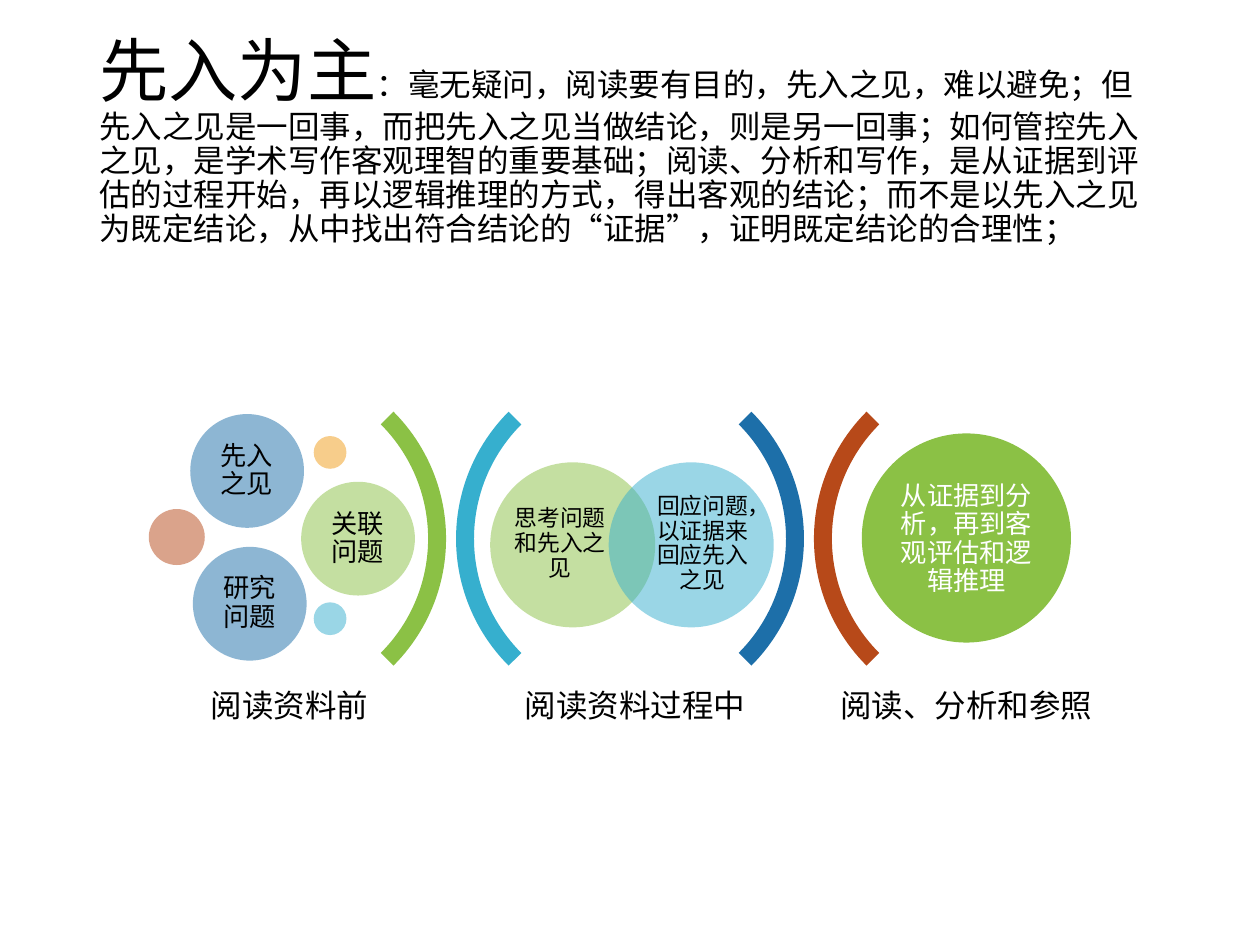
"""Build the slide on preconceptions before, during and after reading."""
from lxml import etree
from pptx import Presentation
from pptx.dml.color import RGBColor
from pptx.enum.shapes import MSO_SHAPE
from pptx.enum.text import MSO_ANCHOR, PP_ALIGN
from pptx.oxml.ns import qn
from pptx.util import Pt

ARC, CIRCLE = MSO_SHAPE.BLOCK_ARC, MSO_SHAPE.OVAL
MIDDLE, CENTER, LEFT = MSO_ANCHOR.MIDDLE, PP_ALIGN.CENTER, PP_ALIGN.LEFT

THEME = {
    "font": "Times New Roman",
    "black": "000000", "white": "FFFFFF",
    "green": "8BC145", "cyan": "36AFCE", "blue": "1D6FA9",
    "rust": "B74919", "orange": "F19D19",
    "heading": 39.6, "body": 18, "label": 18, "circle": 15, "overlap": 13,
}

HEADING = "先入为主"
BODY = (
    "：毫无疑问，阅读要有目的，先入之见，难以避免；但先入之见是一回事，"
    "而把先入之见当做结论，则是另一回事；如何管控先入之见，是学术写作客观理智的重要基础；"
    "阅读、分析和写作，是从证据到评估的过程开始，再以逻辑推理的方式，得出客观的结论；"
    "而不是以先入之见为既定结论，从中找出符合结论的“证据”，证明既定结论的合理性；"
)
TITLE_AREA = (49.7, 28.8, 620.6, 104.4)

# left, rotation, colour
ARCS = [
    (49.7, 90, "green"), (260.6, 270, "cyan"),
    (254.2, 90, "blue"), (465.1, 270, "rust"),
]
ARC_TOP, ARC_SIZE = 205.2, 205.2
ARC_SHAPE = (135, 189, 0.05)

# left, top, diameter, colour, opacity in percent
CIRCLES = [
    (280.1, 264.2, 94.3, "green", 50), (347.8, 264.2, 94.3, "cyan", 50),
    (108.7, 236.6, 65, "blue", 50), (85, 290.9, 32, "rust", 50),
    (179.3, 249.2, 18.7, "orange", 50), (172.1, 275.3, 65, "green", 50),
    (179.3, 344.2, 18.7, "cyan", 50), (110.2, 312.5, 65, "blue", 50),
    (492.5, 247.7, 119.5, "green", 100),
]

# text, left, top, width, height, inset, size, colour
CAPTIONS = [
    ("思考问题和先入之见", 293, 275, 54, 72, 0, "overlap", "black"),
    ("回应问题，以证据来回应先入之见", 374.4, 275, 54, 72, 0, "overlap", "black"),
    ("先入之见", 118.1, 246.2, 46.1, 46.1, 4.3, "circle", "black"),
    ("关联问题", 181.4, 285.1, 46.1, 46.1, 4.3, "circle", "black"),
    ("研究问题", 119.5, 321.8, 46.1, 46.1, 4.3, "circle", "black"),
    ("从证据到分析，再到客观评估和逻辑推理", 509.8, 265.7, 85, 85, 4.3, "circle", "white"),
]
LABELS = [("阅读资料前", 87.8), ("阅读资料过程中", 285.1), ("阅读、分析和参照", 474.5)]
LABEL_TOP, LABEL_WIDTH, LABEL_HEIGHT, LABEL_INSET = 383.8, 155.5, 41, 5


def add_solid(slide, kind, area, colour, opacity=100):
    shape = slide.shapes.add_shape(kind, *map(Pt, area))
    shape.shadow.inherit = False
    shape.line.fill.background()
    shape.fill.solid()
    shape.fill.fore_color.rgb = RGBColor.from_string(THEME[colour])
    if opacity < 100:
        tint = next(shape._element.spPr.iter(qn("a:srgbClr")))
        etree.SubElement(tint, qn("a:alpha"), val=str(opacity * 1000))
    return shape


def add_text(slide, area, spans, colour, align, insets):
    box = slide.shapes.add_textbox(*map(Pt, area))
    frame = box.text_frame
    frame.word_wrap = True
    frame.vertical_anchor = MIDDLE
    frame.margin_left = frame.margin_right = Pt(insets[0])
    frame.margin_top = frame.margin_bottom = Pt(insets[1])
    para = frame.paragraphs[0]
    para.alignment = align
    para.line_spacing = 0.9
    for text, size in spans:
        span = para.add_run()
        span.text = text
        span.font.name = THEME["font"]
        span.font.size = Pt(THEME[size])
        span.font.color.rgb = RGBColor.from_string(THEME[colour])


def main():
    deck = Presentation()
    deck.slide_width, deck.slide_height = Pt(720), Pt(540)
    slide = deck.slides.add_slide(deck.slide_layouts[6])

    add_text(slide, TITLE_AREA, [(HEADING, "heading"), (BODY, "body")],
             "black", LEFT, (7.2, 3.6))
    for left, rotation, colour in ARCS:
        arc = add_solid(slide, ARC, (left, ARC_TOP, ARC_SIZE, ARC_SIZE), colour)
        arc.rotation = rotation
        for index, value in enumerate(ARC_SHAPE):
            arc.adjustments[index] = value
    for left, top, diameter, colour, opacity in CIRCLES:
        add_solid(slide, CIRCLE, (left, top, diameter, diameter), colour, opacity)

    labels = [
        (text, left, LABEL_TOP, LABEL_WIDTH, LABEL_HEIGHT, LABEL_INSET, "label", "black")
        for text, left in LABELS
    ]
    for text, *area, inset, size, colour in CAPTIONS + labels:
        add_text(slide, area, [(text, size)], colour, CENTER, (inset, inset))

    deck.save("out.pptx")


if __name__ == "__main__":
    main()
